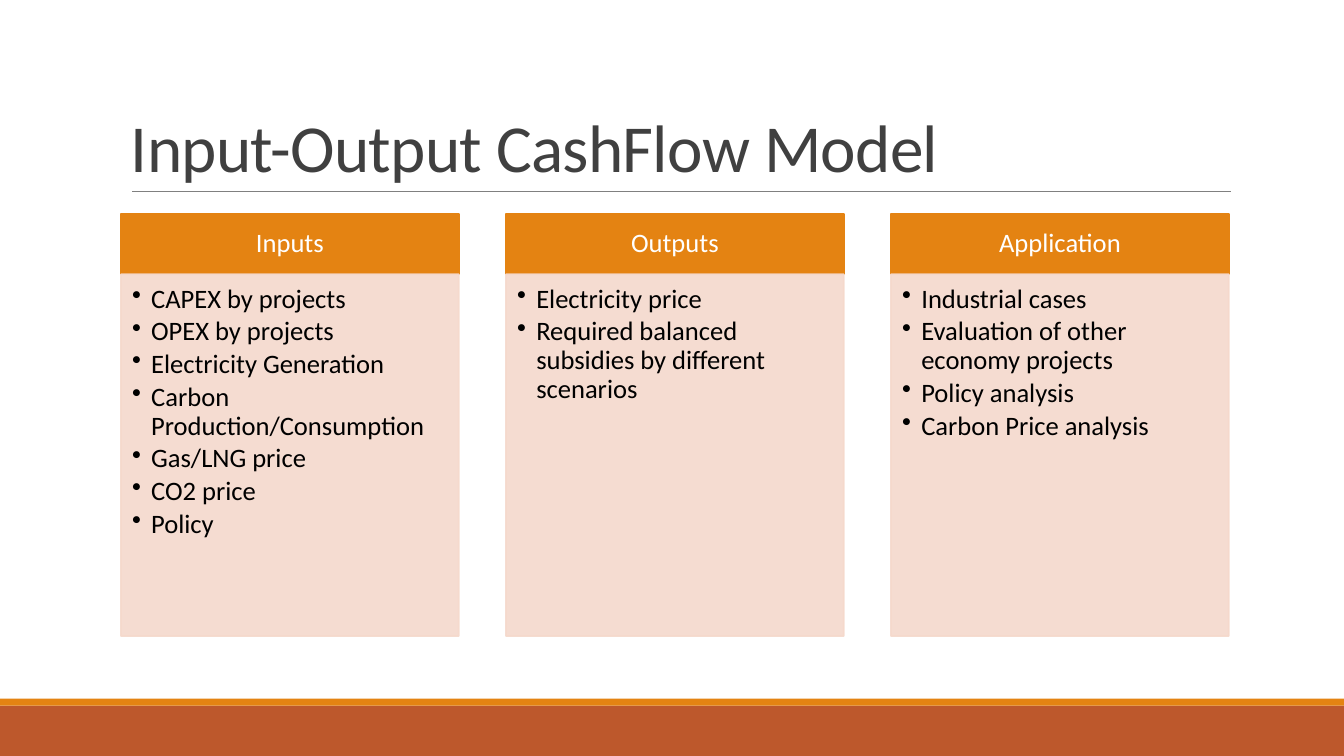
"""Build a slide with three headed lists that describe a cash flow model."""
from lxml import etree
from pptx import Presentation, util as u
from pptx.dml.color import RGBColor
from pptx.enum import shapes, text
from pptx.oxml.ns import qn

WIDTH, HEIGHT = u.Inches(13.33), u.Inches(7.5)
FONT = "Calibri"
COLORS = {
    "orange": "E48312", "rust": "BD582C", "blush": "F5D9CC", "rule": "808080",
    "title": "404040", "white": "FFFFFF", "black": "000000",
}
LEFT, COLUMN_WIDTH, COLUMN_STEP = 9, 25.13, 28.65
HEADER_TOP, HEADER_HEIGHT, BODY_HEIGHT = 28.27, 8, 47.87
COLUMNS = [
    ("Inputs", ["CAPEX by projects", "OPEX by projects", "Electricity Generation",
                "Carbon Production/Consumption", "Gas/LNG price", "CO2 price", "Policy"]),
    ("Outputs", ["Electricity price",
                 "Required balanced subsidies by different scenarios"]),
    ("Application", ["Industrial cases", "Evaluation of other economy projects",
                     "Policy analysis", "Carbon Price analysis"]),
]


def across(percent):
    """Turn a percentage of the slide's width into a length."""
    return u.Emu(round(WIDTH * percent / 100))


def down(percent):
    """Turn a percentage of the slide's height into a length."""
    return u.Emu(round(HEIGHT * percent / 100))


def place(left, top, width, height):
    """Turn a box in percentages into lengths."""
    return across(left), down(top), across(width), down(height)


def color(name):
    """Look up a named colour."""
    return RGBColor.from_string(COLORS[name])


def set_opacity(fill_parent, percent):
    """Set the opacity of the solid colour below an element."""
    for value in fill_parent.findall(qn("a:solidFill") + "/" + qn("a:srgbClr")):
        etree.SubElement(value, qn("a:alpha"), val=str(percent * 1000))


def add_box(slide, box, fill, outlined=False, opacity=100):
    """Add a filled rectangle."""
    shape = slide.shapes.add_shape(shapes.MSO_SHAPE.RECTANGLE, *place(*box))
    shape.shadow.inherit = False
    shape.fill.solid()
    shape.fill.fore_color.rgb = color(fill)
    if outlined:
        shape.line.color.rgb = color(fill)
        shape.line.width = u.Pt(1.25)
    else:
        shape.line.fill.background()
    if opacity < 100:
        properties = shape.fill._xPr
        set_opacity(properties, opacity)
        set_opacity(properties.find(qn("a:ln")), opacity)
    return shape


def set_frame(shape, anchor, insets):
    """Set wrapping, anchor and insets in inches, and return the text frame."""
    frame = shape.text_frame
    frame.word_wrap = True
    frame.vertical_anchor = anchor
    (frame.margin_left, frame.margin_top,
     frame.margin_right, frame.margin_bottom) = map(u.Inches, insets)
    return frame


def write(paragraph, words, size, ink, alignment, line_spacing, space_after=0):
    """Write one run into a paragraph and return the run."""
    paragraph.alignment = alignment
    paragraph.line_spacing = line_spacing
    paragraph.space_after = u.Pt(space_after)
    run = paragraph.add_run()
    run.text = words
    run.font.name = FONT
    run.font.size = u.Pt(size)
    run.font.color.rgb = color(ink)
    return run


def add_bullet(paragraph):
    """Give a paragraph a hanging bullet."""
    properties = paragraph._p.get_or_add_pPr()
    properties.set("marL", str(u.Inches(0.19)))
    properties.set("indent", str(-u.Inches(0.19)))
    etree.SubElement(properties, qn("a:buChar"), char="•")


def add_title(slide, words):
    """Add the slide's title."""
    shape = slide.shapes.add_textbox(*place(LEFT, 4.13, 82.5, 21.2))
    frame = set_frame(shape, text.MSO_ANCHOR.BOTTOM, (0.1, 0.05, 0.1, 0.05))
    run = write(frame.paragraphs[0], words, 48, "title", text.PP_ALIGN.LEFT, 0.85)
    run.font._element.set("spc", "-50")


def add_rule(slide, start, end, top):
    """Add the thin line under the title."""
    line = slide.shapes.add_connector(
        shapes.MSO_CONNECTOR.STRAIGHT, across(start), down(top), across(end), down(top))
    line.line.color.rgb = color("rule")
    line.line.width = u.Pt(0.5)
    etree.SubElement(line._element.spPr, qn("a:effectLst"))


def add_column(slide, index, heading, items):
    """Add a heading box with its bulleted list below."""
    left = LEFT + index * COLUMN_STEP
    header = add_box(slide, (left, HEADER_TOP, COLUMN_WIDTH, HEADER_HEIGHT),
                     "orange", outlined=True)
    frame = set_frame(header, text.MSO_ANCHOR.MIDDLE, (0.15, 0.08, 0.15, 0.08))
    write(frame.paragraphs[0], heading, 19, "white", text.PP_ALIGN.CENTER, 0.9)
    body = add_box(slide, (left, HEADER_TOP + HEADER_HEIGHT, COLUMN_WIDTH, BODY_HEIGHT),
                   "blush", outlined=True, opacity=90)
    frame = set_frame(body, text.MSO_ANCHOR.TOP, (0.11, 0.11, 0.15, 0.17))
    for number, item in enumerate(items):
        paragraph = frame.add_paragraph() if number else frame.paragraphs[0]
        write(paragraph, item, 19, "black", text.PP_ALIGN.LEFT, 0.9, 2.85)
        add_bullet(paragraph)


def main():
    """Build and save the slide."""
    presentation = Presentation()
    presentation.slide_width, presentation.slide_height = WIDTH, HEIGHT
    slide = presentation.slides.add_slide(presentation.slide_layouts[6])
    add_box(slide, (0, 93.33, 100, 6.67), "rust")
    add_box(slide, (0, 92.4, 100, 0.93), "orange")
    add_rule(slide, 9.83, 91.6, 25.33)
    add_title(slide, "Input-Output CashFlow Model")
    for index, (heading, items) in enumerate(COLUMNS):
        add_column(slide, index, heading, items)
    presentation.save("out.pptx")


if __name__ == "__main__":
    main()
